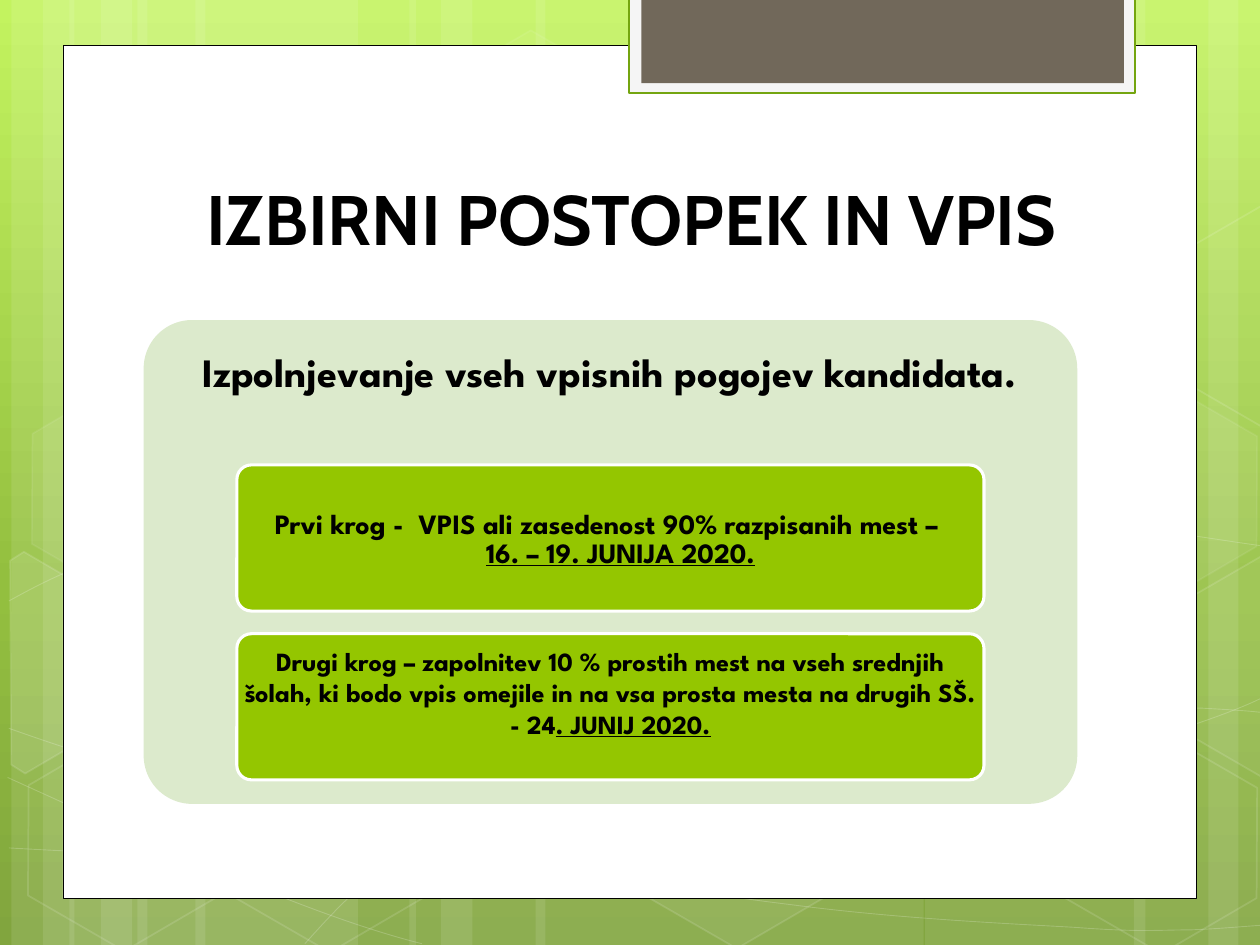
from copy import deepcopy

from lxml import etree
from pptx import Presentation
from pptx.dml.color import RGBColor
from pptx.enum.shapes import MSO_SHAPE
from pptx.enum.text import MSO_ANCHOR, PP_ALIGN
from pptx.oxml.ns import qn
from pptx.util import Cm, Pt

RECT, ROUNDED, HEXAGON = MSO_SHAPE.RECTANGLE, MSO_SHAPE.ROUNDED_RECTANGLE, MSO_SHAPE.HEXAGON
CENTER, MIDDLE, BOTTOM = PP_ALIGN.CENTER, MSO_ANCHOR.MIDDLE, MSO_ANCHOR.BOTTOM

COLORS = {
    "white": "FFFFFF", "black": "000000", "panel": "DCEACC", "step": "94C600",
    "tab": "F5F5F5", "tab line": "74A510", "tab core": "71685A",
}
BACKGROUND = [(0, "C3F35F"), (0.62, "93BF3F"), (1, "81A53E")]
BODY_FONT = "League Spartan"

# Left edge and width of the vertical light bands, in inches
BANDS = [(1.09, 1.75), (0.09, 0.5), (0.34, 0.83), (1.55, 1.75), (0.55, 0.5), (0.8, 0.83),
         (7.34, 1.75), (9.59, 0.5), (9, 0.83), (4.25, 3.08), (3.25, 0.5), (3.5, 0.83)]

# Each curve: a start point, then two control points and an end point per segment
CURVES = [
    [(0.07, 6.73), (0.61, 6.76), (1.15, 6.79), (1.9, 6.78), (2.65, 6.77), (3.58, 6.75),
     (4.58, 6.65), (5.58, 6.55), (7, 6.36), (7.92, 6.17), (8.83, 5.98), (9.77, 5.68),
     (10.07, 5.51)],
    [(0.07, 4.77), (0.36, 4.61), (0.65, 4.46), (1.21, 4.31), (1.78, 4.16), (2.59, 3.94),
     (3.47, 3.87), (4.36, 3.8), (5.44, 3.79), (6.54, 3.87), (7.64, 3.95), (9.47, 4.26),
     (10.07, 4.34)],
    [(0.06, 6.17), (1.27, 6.72), (2.47, 7.27), (3.35, 7.49)],
    [(0.07, 5.78), (0.38, 5.89), (0.7, 6), (1.28, 6.16), (1.86, 6.31), (2.73, 6.56),
     (3.57, 6.73), (4.4, 6.9), (5.45, 7.08), (6.28, 7.18), (7.11, 7.29), (8, 7.33),
     (8.53, 7.36), (9.06, 7.4), (9.19, 7.38), (9.45, 7.38), (9.71, 7.37), (9.89, 7.35),
     (10.07, 7.34)],
    [(2.42, 7.49), (2.6, 7.29), (2.78, 7.09), (3.02, 6.91), (3.26, 6.72), (3.6, 6.53),
     (3.88, 6.39), (4.16, 6.25), (4.33, 6.19), (4.69, 6.09), (5.06, 5.99), (5.73, 5.85),
     (6.08, 5.78), (6.44, 5.71), (6.49, 5.71), (6.8, 5.69), (7.11, 5.66), (7.6, 5.63),
     (7.94, 5.62), (8.29, 5.61), (8.86, 5.62), (8.86, 5.62), (9.08, 5.62), (9.31, 5.62),
     (9.53, 5.62), (9.71, 5.63), (9.88, 5.64), (9.97, 5.65), (10.06, 5.66), (10.03, 5.65),
     (10.06, 5.66)],
]

# Left, top, fill opacity and line opacity (percent) of the hexagons
HEXAGONS = [(3.34, 0.36, 4, 8), (4.97, 5.89, 6, 12), (0.11, 5.91, 0, 12), (0.14, 3.12, 7, 8),
            (1.74, 5.92, 0, 12), (7.53, 4.53, 10, 12), (8.34, 5.93, 0, 12), (8.34, 3.14, 7, 8)]

# Corner points and fill opacity of the hexagons cut by the page edge
CUT_HEXAGONS = [
    ([(0.08, 4.45), (0.19, 4.38), (0.96, 4.83), (0.95, 5.7), (0.2, 6.14), (0.09, 6.07)], 10),
    ([(9.26, 4.85), (10.02, 4.41), (10.09, 4.46), (10.09, 6.13), (10.02, 6.17), (9.26, 5.73)], 4),
    ([(9.26, 2.07), (10.02, 1.63), (10.1, 1.68), (10.09, 3.35), (10.02, 3.39), (9.26, 2.95)], 0),
]


def inch(value):
    return Cm(value * 2.54)


def rgb(name):
    return RGBColor.from_string(COLORS[name])


def set_opacity(fill_parent, percent):
    color = fill_parent.find(qn("a:solidFill"))[0]
    etree.SubElement(color, qn("a:alpha")).set("val", str(percent * 1000))


def paint(shape, fill=None, line=None, width=1, fill_opacity=100, line_opacity=100):
    shape.shadow.inherit = False
    if fill and fill_opacity:
        shape.fill.solid()
        shape.fill.fore_color.rgb = rgb(fill)
        if fill_opacity < 100:
            set_opacity(shape.fill._xPr, fill_opacity)
    else:
        shape.fill.background()
    if line:
        shape.line.color.rgb = rgb(line)
        shape.line.width = Pt(width)
        if line_opacity < 100:
            set_opacity(shape.line._ln, line_opacity)
    else:
        shape.line.fill.background()


def add_block(page, kind, place, **style):
    shape = page.shapes.add_shape(kind, *map(inch, place))
    paint(shape, **style)
    return shape


def add_outline(page, points, close, **style):
    corners = [(inch(x), inch(y)) for x, y in points]
    builder = page.shapes.build_freeform(*corners[0])
    builder.add_line_segments(corners[1:], close=close)
    shape = builder.convert_to_shape()
    paint(shape, **style)
    return shape


def add_curve(page, points, **style):
    """Draw a chain of cubic Bezier segments: every three lines become one curve."""
    shape = add_outline(page, points, False, **style)
    lines = list(shape._element.iter(qn("a:lnTo")))
    for first in range(0, len(lines), 3):
        curve = etree.Element(qn("a:cubicBezTo"))
        lines[first].addprevious(curve)
        for line in lines[first:first + 3]:
            curve.append(line[0])
            line.getparent().remove(line)


def write_text(box, paragraphs, size, font, insets, anchor=MIDDLE):
    """Each paragraph is a list of (text, underlined) spans."""
    frame = box.text_frame
    frame.word_wrap = True
    frame.vertical_anchor = anchor
    frame.margin_left, frame.margin_top, frame.margin_right, frame.margin_bottom = map(inch, insets)
    for index, spans in enumerate(paragraphs):
        para = frame.add_paragraph() if index else frame.paragraphs[0]
        para.alignment = CENTER
        para.font.name, para.font.size, para.font.bold = font, Pt(size), True
        para.font.color.rgb = rgb("black")
        for text, underlined in spans:
            span = para.add_run()
            span.text = text
            if underlined:
                span.font.underline = True
    return frame


def add_text(page, place, text, size, font, insets, anchor=MIDDLE):
    box = page.shapes.add_textbox(*map(inch, place))
    write_text(box, [[(text, False)]], size, font, insets, anchor)


def add_step(page, top, paragraphs, size, bottom_inset):
    box = add_block(page, ROUNDED, (1.88, top, 5.93, 1.16), fill="step", line="white", width=1.75)
    box.adjustments[0] = 0.1
    return write_text(box, paragraphs, size, BODY_FONT, (0, 0.03, 0, bottom_inset))


def set_background(page):
    fill = page.background.fill
    fill.gradient()
    fill.gradient_angle = 270
    last = fill.gradient_stops[1]._gs
    last.addprevious(deepcopy(last))
    for stop, (position, color) in zip(fill.gradient_stops, BACKGROUND):
        stop.position = position
        stop.color.rgb = RGBColor.from_string(color)


def add_decoration(page):
    for left, width in BANDS:
        add_block(page, RECT, (left, 0, width, 7.5), fill="white", fill_opacity=10)
    for curve in CURVES:
        add_curve(page, curve, line="white", width=0.5, line_opacity=20)
    for left, top, fill_opacity, line_opacity in HEXAGONS:
        hexagon = add_block(page, HEXAGON, (left, top, 1.75, 1.52), fill="white", line="white",
                            fill_opacity=fill_opacity, line_opacity=line_opacity)
        hexagon.adjustments[0] = 0.285
        hexagon.rotation = 30
    for corners, fill_opacity in CUT_HEXAGONS:
        add_outline(page, corners, True, fill="white", line="white",
                    fill_opacity=fill_opacity, line_opacity=12)


def main():
    deck = Presentation()
    deck.slide_width, deck.slide_height = Cm(25.4), Cm(19.05)
    page = deck.slides.add_slide(deck.slide_layouts[6])

    # Backdrop, white sheet and tab
    set_background(page)
    add_decoration(page)
    add_block(page, RECT, (0.5, 0.36, 9, 6.77), fill="white", line="black", width=0.5)
    add_block(page, RECT, (4.99, -0.02, 4.02, 0.76), fill="tab", line="tab line", width=1.25)
    add_block(page, RECT, (5.09, -0.02, 3.83, 0.68), fill="tab core")

    # Title
    add_text(page, (1.17, 0.86, 7.68, 1.25), "IZBIRNI POSTOPEK IN VPIS", 40, "Cabin",
             (0.1, 0.05, 0.1, 0.05), BOTTOM)

    # Panel with its heading
    panel = add_block(page, ROUNDED, (1.14, 2.54, 7.41, 3.84), fill="panel")
    panel.adjustments[0] = 0.1
    add_text(page, (1.14, 2.54, 7.41, 1.15), "Izpolnjevanje vseh vpisnih pogojev kandidata.",
             23, BODY_FONT, (0.1, 0.1, 0.1, 0.43))

    # Enrolment rounds
    first_round = add_step(page, 3.69, [
        [("Prvi krog -  VPIS ali zasedenost 90% razpisanih mest – ", False)],
        [("16. – 19. JUNIJA 2020.", True), (" ", False)],
    ], 16, 0.03)
    date = first_round.paragraphs[1]
    date.line_spacing = 0.9
    date._p.get_or_add_pPr().set("marL", str(Cm(0.56)))
    add_step(page, 5.03, [
        [("Drugi krog – zapolnitev 10 % prostih mest na vseh srednjih šolah, ki bodo vpis "
          "omejile in na vsa prosta mesta na drugih SŠ. - 24", False), (". JUNIJ 2020.", True)],
    ], 15, 0.26)

    deck.save("out.pptx")


if __name__ == "__main__":
    main()
